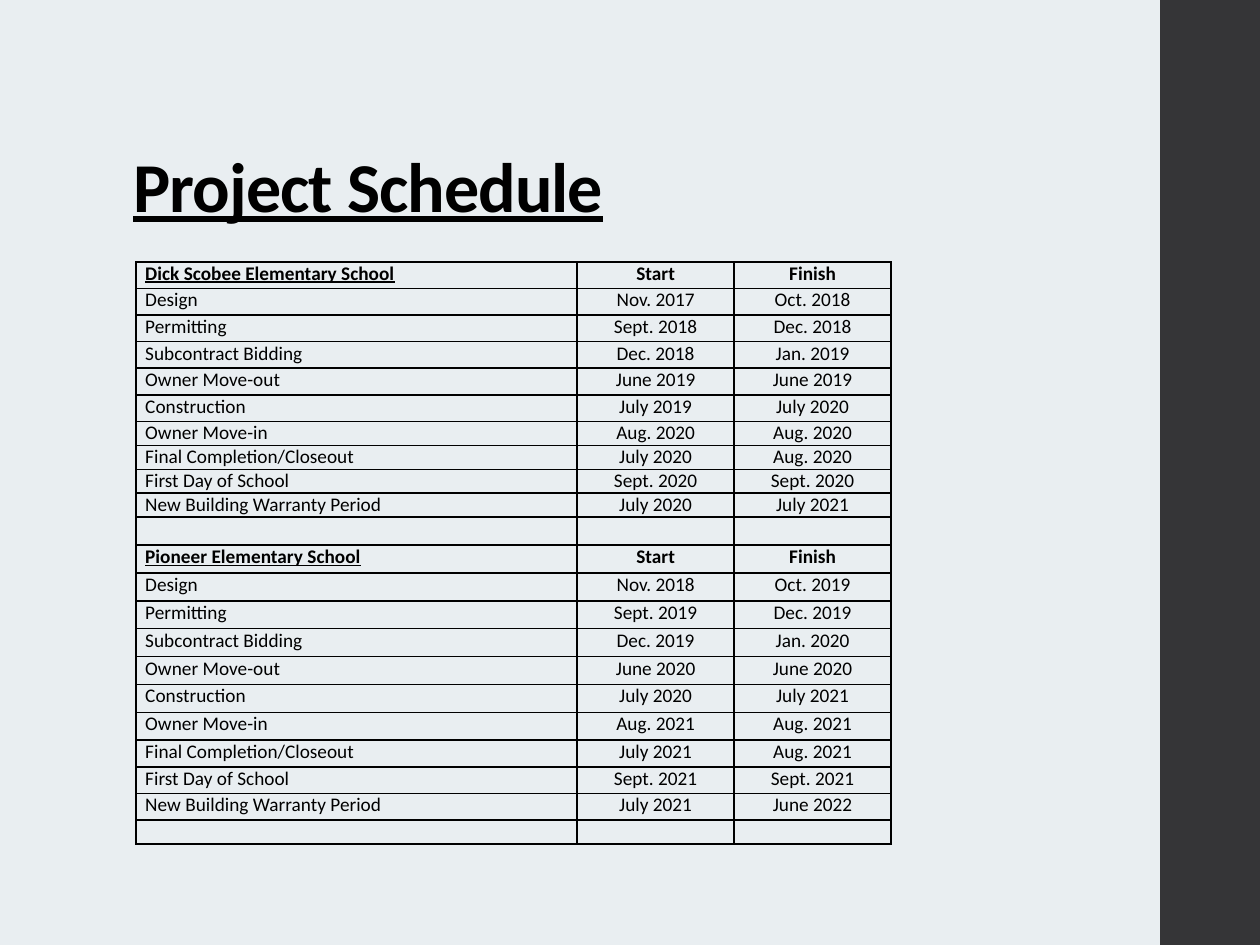
from lxml import etree
from pptx import Presentation
from pptx.dml.color import RGBColor
from pptx.enum.shapes import MSO_SHAPE
from pptx.enum.text import MSO_ANCHOR, PP_ALIGN
from pptx.oxml.ns import qn
from pptx.util import Pt

RECT = MSO_SHAPE.RECTANGLE
LEFT, CENTER = PP_ALIGN.LEFT, PP_ALIGN.CENTER
BOTTOM = MSO_ANCHOR.BOTTOM

COLORS = {"back": "E9EEF1", "band": "353537", "ink": "000000"}
FONT = "Calibri"
SIZE = 11

WIDTHS = [252, 89.7, 89.7]
HEIGHTS = [15.2] * 6 + [13.7] * 4 + [15.95] * 8 + [15.2] * 3 + [13.7]

STEPS = [
    "Design", "Permitting", "Subcontract Bidding", "Owner Move-out",
    "Construction", "Owner Move-in", "Final Completion/Closeout",
    "First Day of School", "New Building Warranty Period",
]
# School name, then start and finish of each step
SCHOOLS = [
    ("Dick Scobee Elementary School", [
        ("Nov. 2017", "Oct. 2018"), ("Sept. 2018", "Dec. 2018"),
        ("Dec. 2018", "Jan. 2019"), ("June 2019", "June 2019"),
        ("July 2019", "July 2020"), ("Aug. 2020", "Aug. 2020"),
        ("July 2020", "Aug. 2020"), ("Sept. 2020", "Sept. 2020"),
        ("July 2020", "July 2021"),
    ]),
    ("Pioneer Elementary School", [
        ("Nov. 2018", "Oct. 2019"), ("Sept. 2019", "Dec. 2019"),
        ("Dec. 2019", "Jan. 2020"), ("June 2020", "June 2020"),
        ("July 2020", "July 2021"), ("Aug. 2021", "Aug. 2021"),
        ("July 2021", "Aug. 2021"), ("Sept. 2021", "Sept. 2021"),
        ("July 2021", "June 2022"),
    ]),
]


def color(name):
    return RGBColor.from_string(COLORS[name])


def add_run(para, text, size, bold=False, under=False):
    run = para.add_run()
    run.text = text
    font = run.font
    font.name, font.size = FONT, Pt(size)
    font.bold, font.underline = bold, under
    font.color.rgb = color("ink")
    return run


def add_band(slide):
    band = slide.shapes.add_shape(RECT, Pt(663), 0, Pt(57), Pt(540))
    band.shadow.inherit = False
    band.fill.solid()
    band.fill.fore_color.rgb = color("band")
    band.line.fill.background()


def add_title(slide, text):
    box = slide.shapes.add_textbox(Pt(69), Pt(29), Pt(523), Pt(104.4))
    frame = box.text_frame
    frame.word_wrap = True
    frame.vertical_anchor = BOTTOM
    para = frame.paragraphs[0]
    para.line_spacing = 0.9
    run = add_run(para, text, 40, True, True)
    run.font._element.set("spc", "-50")


def add_border(cell):
    props = cell._tc.get_or_add_tcPr()
    for side in ("a:lnL", "a:lnR", "a:lnT", "a:lnB"):
        line = etree.SubElement(props, qn(side), w=str(Pt(1)))
        fill = etree.SubElement(line, qn("a:solidFill"))
        etree.SubElement(fill, qn("a:srgbClr"), val=COLORS["ink"])


def fill_cell(cell, text, align, bold, under):
    add_border(cell)
    cell.fill.background()
    cell.margin_left = cell.margin_right = Pt(5.2)
    cell.margin_top = cell.margin_bottom = 0
    para = cell.text_frame.paragraphs[0]
    para.alignment = align
    para.space_before = para.space_after = Pt(2)
    if text:
        add_run(para, text, SIZE, bold, under)
    else:
        # Keeps an empty row from growing to the default text size
        etree.SubElement(para._p, qn("a:endParaRPr"), sz=str(SIZE * 100))


def list_rows():
    rows = []
    for school, dates in SCHOOLS:
        rows.append((school, "Start", "Finish"))
        rows += [(step, *pair) for step, pair in zip(STEPS, dates)]
        rows.append(("", "", ""))
    return rows


def add_plan(slide):
    rows = list_rows()
    frame = slide.shapes.add_table(
        len(rows), len(WIDTHS), Pt(77.8), Pt(149.6),
        Pt(sum(WIDTHS)), Pt(sum(HEIGHTS)))
    table = frame.table
    table.first_row = table.horz_banding = False
    for col, width in zip(table.columns, WIDTHS):
        col.width = Pt(width)
    for r, row in enumerate(rows):
        table.rows[r].height = Pt(HEIGHTS[r])
        head = row[1] == "Start"
        for c, text in enumerate(row):
            align = CENTER if c else LEFT
            fill_cell(table.cell(r, c), text, align, head, head and c == 0)


def main():
    deck = Presentation()
    deck.slide_width, deck.slide_height = Pt(720), Pt(540)
    slide = deck.slides.add_slide(deck.slide_layouts[6])

    # Background and side band
    back = slide.background.fill
    back.solid()
    back.fore_color.rgb = color("back")
    add_band(slide)

    # Title and schedule
    add_title(slide, "Project Schedule")
    add_plan(slide)
    deck.save("out.pptx")


if __name__ == "__main__":
    main()
